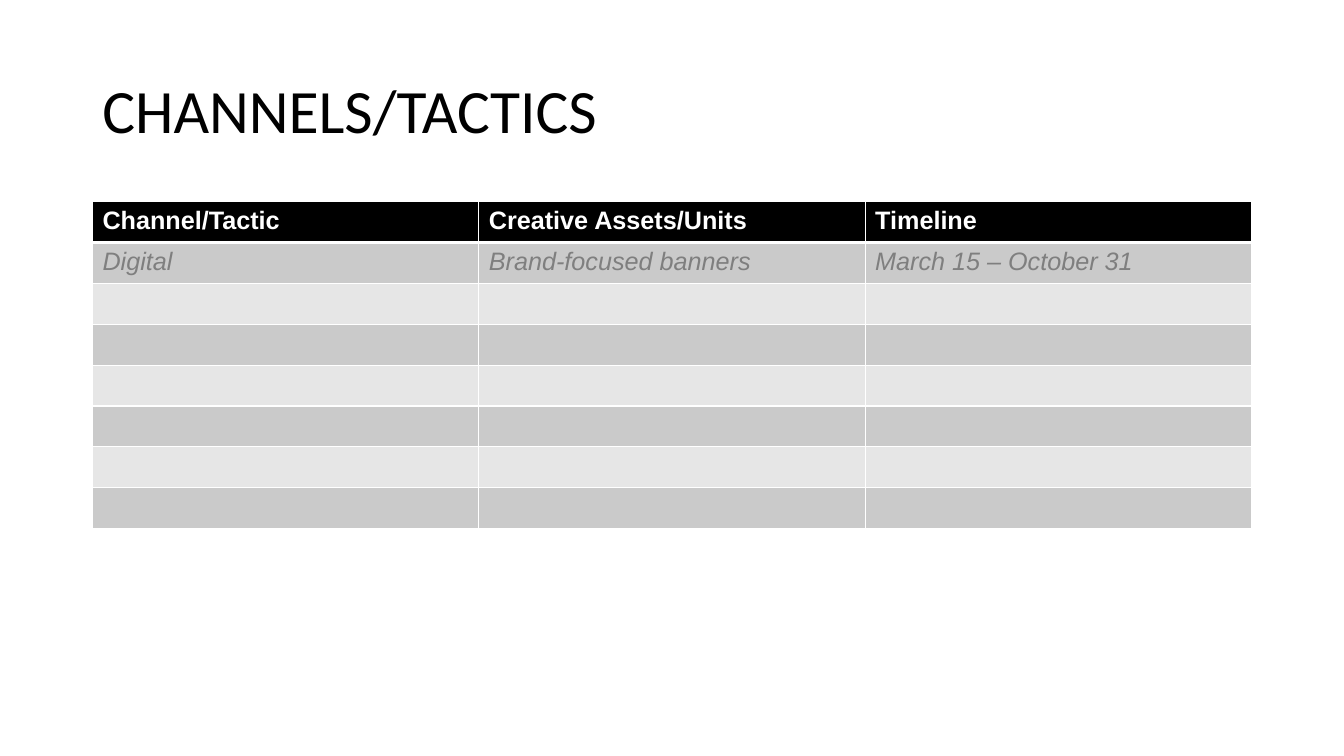
from lxml.etree import SubElement
from pptx import Presentation
from pptx.dml.color import RGBColor
from pptx.enum.text import MSO_ANCHOR as Anchor
from pptx.oxml.ns import qn
from pptx.util import Cm, Pt

BLACK = RGBColor(0x00, 0x00, 0x00)
WHITE = RGBColor(0xFF, 0xFF, 0xFF)
EXAMPLE_GREY = RGBColor(0x7F, 0x7F, 0x7F)
DARK_BAND = RGBColor(0xCA, 0xCA, 0xCA)
LIGHT_BAND = RGBColor(0xE6, 0xE6, 0xE6)

LEFT, WIDTH = Cm(2.33), Cm(29.21)
ROW_COUNT, ROW_HEIGHT = 8, Cm(1.03)
HEADINGS = ["Channel/Tactic", "Creative Assets/Units", "Timeline"]
EXAMPLE = ["Digital", "Brand-focused banners", "March 15 – October 31"]


def write(frame, text, font="Arial", size=18, color=BLACK, bold=False,
          italic=False, line_spacing=None):
    paragraph = frame.paragraphs[0]
    paragraph.line_spacing = line_spacing
    # The paragraph font keeps the size of cells left empty.
    targets = [paragraph.font]
    if text:
        run = paragraph.add_run()
        run.text = text
        targets = [run.font]
    else:
        end = SubElement(paragraph._p, qn("a:endParaRPr"))
        end.set("sz", str(size * 100))
        SubElement(end, qn("a:latin")).set("typeface", font)
    for style in targets:
        style.name, style.size = font, Pt(size)
        style.bold, style.italic = bold, italic
        style.color.rgb = color


def add_title(slide, text):
    title = slide.shapes.add_textbox(LEFT, Cm(1.01), WIDTH, Cm(3.68))
    frame = title.text_frame
    frame.word_wrap = True
    frame.vertical_anchor = Anchor.MIDDLE
    write(frame, text, font="Calibri", size=44, line_spacing=0.9)


def set_borders(cell, bottom=1, top=1):
    """Draw white cell borders, with widths in points."""
    properties = cell._tc.get_or_add_tcPr()
    for side, width in (("L", 1), ("R", 1), ("T", top), ("B", bottom)):
        line = SubElement(properties, qn(f"a:ln{side}"), w=str(Pt(width)))
        fill = SubElement(line, qn("a:solidFill"))
        SubElement(fill, qn("a:srgbClr"), val=str(WHITE))


def fill_row(table, row, texts, background, top=1, bottom=1, **text_format):
    for column, text in enumerate(texts):
        cell = table.cell(row, column)
        set_borders(cell, bottom, top)
        cell.fill.solid()
        cell.fill.fore_color.rgb = background
        write(cell.text_frame, text, **text_format)


def add_tactics_table(slide):
    table = slide.shapes.add_table(
        ROW_COUNT, len(HEADINGS), LEFT, Cm(5.08), WIDTH,
        ROW_HEIGHT * ROW_COUNT).table
    for row in table.rows:
        row.height = ROW_HEIGHT

    fill_row(table, 0, HEADINGS, BLACK, bottom=3, color=WHITE, bold=True)
    fill_row(table, 1, EXAMPLE, DARK_BAND, top=3, color=EXAMPLE_GREY,
             italic=True)
    for row in range(2, ROW_COUNT):
        band = DARK_BAND if row % 2 else LIGHT_BAND
        fill_row(table, row, [""] * len(HEADINGS), band)


def main():
    deck = Presentation()
    deck.slide_width, deck.slide_height = Cm(33.87), Cm(19.05)
    slide = deck.slides.add_slide(deck.slide_layouts[6])
    add_title(slide, "CHANNELS/TACTICS")
    add_tactics_table(slide)
    deck.save("out.pptx")


if __name__ == "__main__":
    main()
